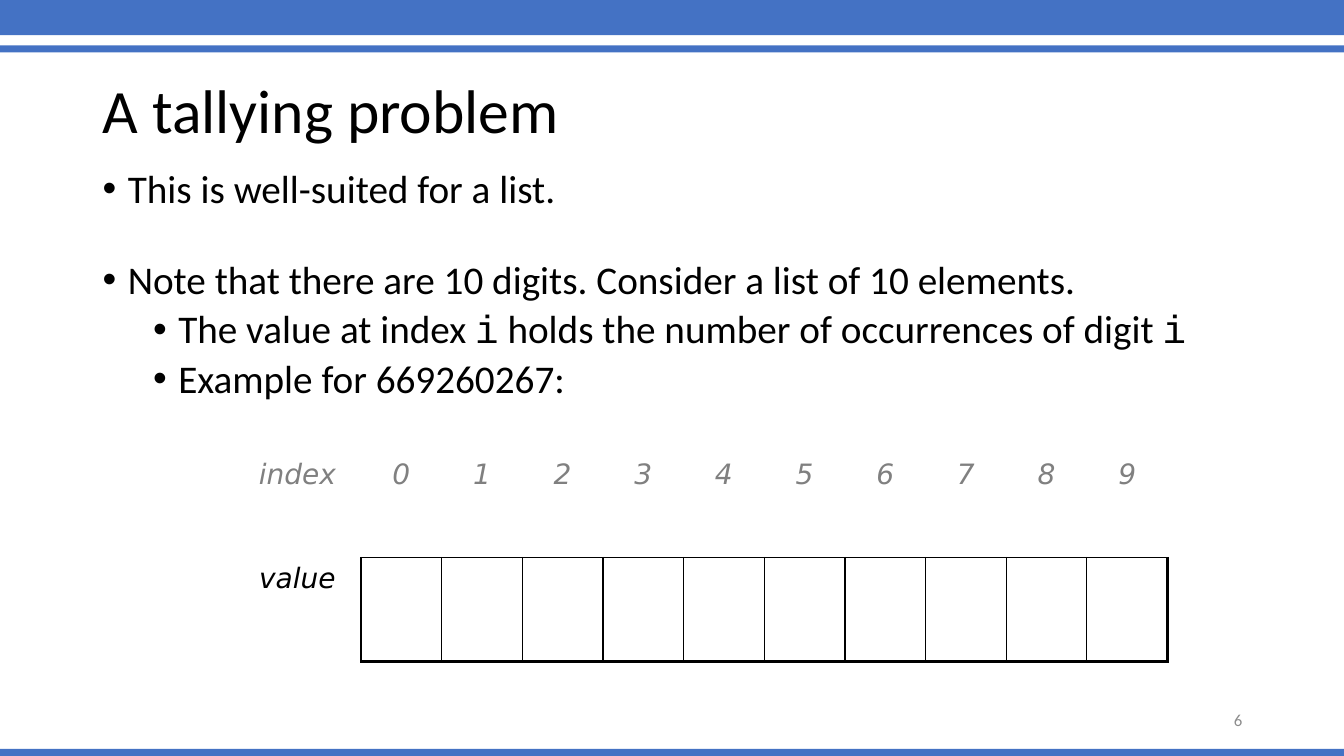
from dataclasses import dataclass

from lxml import etree
from pptx import Presentation
from pptx.dml.color import RGBColor
from pptx.enum.shapes import MSO_SHAPE
from pptx.enum.text import MSO_ANCHOR, PP_ALIGN
from pptx.oxml.ns import qn
from pptx.util import Inches, Pt

RECTANGLE = MSO_SHAPE.RECTANGLE
MIDDLE = MSO_ANCHOR.MIDDLE
CENTER = PP_ALIGN.CENTER
RIGHT = PP_ALIGN.RIGHT


@dataclass(frozen=True)
class Theme:
    accent: str = "4472C4"
    ink: str = "000000"
    muted: str = "808080"
    footer: str = "8C8C8C"
    font: str = "Calibri"
    code_font: str = "Courier New"
    table_font: str = "DejaVu Sans"
    title_size: int = 44
    body_size: int = 28
    table_size: int = 20
    footer_size: int = 12
    thin: float = 1
    thick: float = 2.25


THEME = Theme()
BULLETS = [
    (0, 10, ["This is well-suited for a list."]),
    (0, 35, ["Note that there are 10 digits. Consider a list of 10 elements."]),
    (1, 5, ["The value at index ", "i", " holds the number of occurrences of digit ", "i"]),
    (1, 5, ["Example for 669260267:"]),
]
DIGITS = 10


def style_run(run, size, color, font=THEME.font, italic=False):
    run.font.size = Pt(size)
    run.font.name = font
    run.font.italic = italic
    run.font.color.rgb = RGBColor.from_string(color)


def add_text_frame(slide, left, top, width, height):
    box = slide.shapes.add_textbox(Inches(left), Inches(top), Inches(width), Inches(height))
    box.text_frame.word_wrap = True
    return box.text_frame


def add_bands(slide, left, width):
    for top, height in ((-0.03, 0.38), (0.45, 0.07), (7.43, 0.07)):
        band = slide.shapes.add_shape(
            RECTANGLE, Inches(left), Inches(top), Inches(width), Inches(height))
        band.shadow.inherit = False
        band.fill.solid()
        band.fill.fore_color.rgb = RGBColor.from_string(THEME.accent)
        band.line.fill.background()


def add_line_of_text(slide, box, text, size, color, alignment=None):
    text_frame = add_text_frame(slide, *box)
    text_frame.vertical_anchor = MIDDLE
    paragraph = text_frame.paragraphs[0]
    paragraph.text = text
    paragraph.alignment = alignment
    paragraph.line_spacing = 0.9
    style_run(paragraph.runs[0], size, color)


def set_bullet(paragraph, level):
    paragraph.level = level
    properties = paragraph._p.get_or_add_pPr()
    properties.set("marL", str(Inches(0.25 + 0.5 * level)))
    properties.set("indent", str(Inches(-0.25)))
    etree.SubElement(properties, qn("a:buFont")).set("typeface", "Arial")
    etree.SubElement(properties, qn("a:buChar")).set("char", "•")


def add_bullets(slide, box):
    text_frame = add_text_frame(slide, *box)
    for position, (level, space, pieces) in enumerate(BULLETS):
        paragraph = text_frame.add_paragraph() if position else text_frame.paragraphs[0]
        paragraph.line_spacing = 0.9
        paragraph.space_before = Pt(space)
        set_bullet(paragraph, level)
        for piece in pieces:
            run = paragraph.add_run()
            run.text = piece
            font = THEME.code_font if piece == "i" else THEME.font
            style_run(run, THEME.body_size, THEME.ink, font)


def set_borders(cell, widths):
    properties = cell._tc.get_or_add_tcPr()
    for side in "LRTB":
        line = etree.SubElement(properties, qn(f"a:ln{side}"))
        if side in widths:
            line.set("w", str(Pt(widths[side])))
            fill = etree.SubElement(line, qn("a:solidFill"))
            etree.SubElement(fill, qn("a:srgbClr")).set("val", THEME.ink)
        else:
            etree.SubElement(line, qn("a:noFill"))
    cell.fill.background()


def cell_borders(row, column):
    if column == 0:
        return {"R": THEME.thin} if row else {}
    if row == 0:
        return {"B": THEME.thin}
    right = THEME.thick if column == DIGITS else THEME.thin
    return {"L": THEME.thin, "R": right, "T": THEME.thin, "B": THEME.thick}


def add_tally_table(slide, left, top, label_width, digit_width, row_height):
    rows = [
        (THEME.muted, ["index"] + [str(digit) for digit in range(DIGITS)]),
        (THEME.ink, ["value"] + [""] * DIGITS),
    ]
    table = slide.shapes.add_table(
        len(rows), DIGITS + 1, Inches(left), Inches(top),
        Inches(label_width + DIGITS * digit_width), Inches(len(rows) * row_height)).table
    table.first_row = False
    table.horz_banding = False
    for position, column in enumerate(table.columns):
        column.width = Inches(digit_width if position else label_width)
    for row, (color, texts) in enumerate(rows):
        table.rows[row].height = Inches(row_height)
        for column, text in enumerate(texts):
            cell = table.cell(row, column)
            set_borders(cell, cell_borders(row, column))
            if text:
                paragraph = cell.text_frame.paragraphs[0]
                paragraph.text = text
                paragraph.alignment = CENTER
                style_run(paragraph.runs[0], THEME.table_size, color, THEME.table_font, True)


def build_tally_slide(presentation):
    slide = presentation.slides.add_slide(presentation.slide_layouts[6])
    add_bands(slide, 0, 13.33)
    add_line_of_text(slide, (0.92, 0.4, 11.5, 1.45), "A tallying problem",
                     THEME.title_size, THEME.ink)
    add_bullets(slide, (0.92, 1.63, 11.5, 5.13))
    add_tally_table(slide, 2.32, 4.5, 1.26, 0.8, 1.03)
    add_line_of_text(slide, (9.42, 6.95, 3, 0.4), "6",
                     THEME.footer_size, THEME.footer, RIGHT)


def main():
    presentation = Presentation()
    presentation.slide_width = Inches(13.33)
    presentation.slide_height = Inches(7.5)
    build_tally_slide(presentation)
    presentation.save("out.pptx")


if __name__ == "__main__":
    main()
